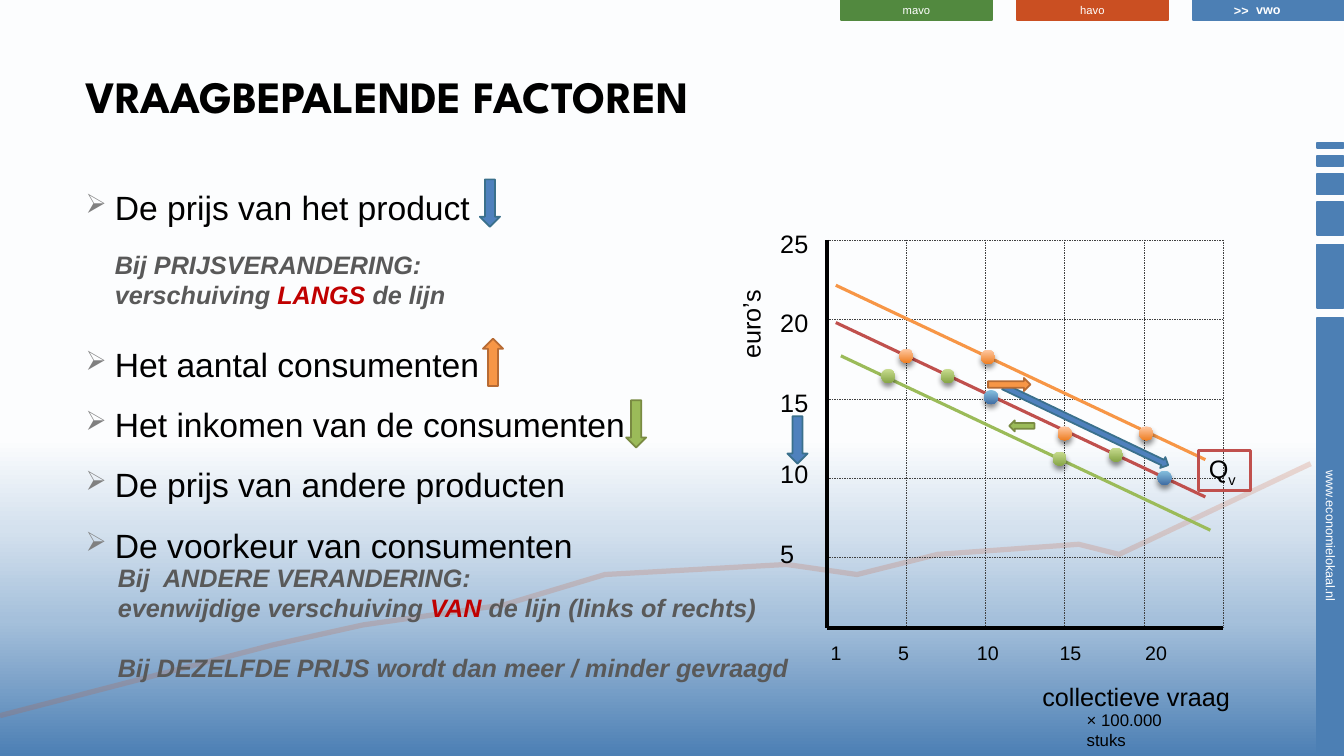
import pptx
import pptx.util
import pptx.dml.color
import pptx.enum.dml
import pptx.enum.shapes
import pptx.enum.text
import pptx.oxml
import pptx.oxml.ns
from lxml import etree

Pt = pptx.util.Pt
KIND = pptx.enum.shapes.MSO_SHAPE
ANCHOR = pptx.enum.text.MSO_ANCHOR
ALIGN = pptx.enum.text.PP_ALIGN
qn = pptx.oxml.ns.qn

HUES = {
    "black": "000000", "white": "FFFFFF", "grey": "595959", "grid": "404040",
    "mark": "808080", "brand": "4C7FB4", "rust": "CA4F22", "leaf": "52893F",
    "alert": "C00000", "red": "C0504D", "blue": "4F81BD", "orange": "F79646",
    "green": "9BBB59", "blue edge": "3A708C", "orange edge": "B76B34",
    "green edge": "798A42",
}
SKY = [(0, "4C7FB4"), (18, "A5C0DB"), (30, "D4E1EE"), (42, "FCFDFE"), (50, "FFFFFF")]
GLOSS = {
    "blue": [(0, "86C0DF"), (100, "416EA4")],
    "orange": [(0, "FFC9A4"), (100, "EE7E22")],
    "green": [(0, "C9DD90"), (100, "86A547")],
}


def rgb(name):
    return pptx.dml.color.RGBColor.from_string(HUES[name])


def sub(parent, tag, **attrs):
    return etree.SubElement(parent, qn(tag), {k: str(v) for k, v in attrs.items()})


def blend(fill, owner, stops, angle):
    """Give fill a linear gradient with any number of stops."""
    fill.gradient()
    fill.gradient_angle = angle
    ramp = next(owner.iter(qn("a:gsLst")))
    for stop in list(ramp):
        ramp.remove(stop)
    for pos, hue in stops:
        sub(sub(ramp, "a:gs", pos=pos * 1000), "a:srgbClr", val=hue)


def write(frame, paras, size=18, color="black", font="Arial", bold=False,
          italic=False, align=ALIGN.LEFT, gaps=(), bullet=None):
    """Fill frame; a paragraph is a string or a list of strings and (text, format) pairs."""
    for i, para in enumerate([paras] if isinstance(paras, str) else paras):
        p = frame.paragraphs[0] if i == 0 else frame.add_paragraph()
        p.alignment = align
        if bullet:
            props = p._p.get_or_add_pPr()
            props.set("marL", str(Pt(21)))
            props.set("indent", str(-Pt(21)))
            sub(sub(props, "a:buClr"), "a:srgbClr", val=HUES["mark"])
            sub(props, "a:buSzPct", val=80000)
            sub(props, "a:buChar", char=bullet)
        if i and gaps:
            p.space_before = Pt(gaps[i - 1])
        for part in [para] if isinstance(para, str) else para:
            text, extra = (part, {}) if isinstance(part, str) else part
            if text == "\n":
                p.add_line_break()
                continue
            run = p.add_run()
            run.text = text
            face = run.font
            face.name, face.size, face.bold, face.italic = font, Pt(size), bold, italic
            face.color.rgb = rgb(extra.get("color", color))
            if "base" in extra:
                run._r.get_or_add_rPr().set("baseline", str(extra["base"] * 1000))


class Board:
    """One slide on a grid of 75 rows; columns are as wide as rows are high."""

    def __init__(self):
        self.deck = pptx.Presentation()
        self.deck.slide_width = pptx.util.Inches(13.33)
        self.deck.slide_height = pptx.util.Inches(7.5)
        self.unit = self.deck.slide_height / 75
        self.slide = self.deck.slides.add_slide(self.deck.slide_layouts[5])
        self.shapes = self.slide.shapes
        blend(self.slide.background.fill, self.slide.element, SKY, 90)

    def at(self, *cells):
        return [round(c * self.unit) for c in cells]

    def title(self, text, *box):
        head = self.shapes.title
        head.left, head.top, head.width, head.height = self.at(*box)
        head.text_frame.vertical_anchor = ANCHOR.MIDDLE
        write(head.text_frame, text, size=32, font="League Spartan", bold=True)

    def text(self, paras, *box, wrap=False, rot=0, **style):
        item = self.shapes.add_textbox(*self.at(*box))
        item.rotation = rot
        item.text_frame.word_wrap = wrap
        write(item.text_frame, paras, **style)

    def shape(self, kind, *box, fill=None, edge=None, width=1.25, rot=0):
        item = self.shapes.add_shape(kind, *self.at(*box))
        item.shadow.inherit = False
        item.rotation = rot
        if fill:
            item.fill.solid()
            item.fill.fore_color.rgb = rgb(fill)
        else:
            item.fill.background()
        if edge:
            item.line.color.rgb = rgb(edge)
            item.line.width = Pt(width)
        else:
            item.line.fill.background()
        return item

    def label(self, text, *box, fill, rot=0, **style):
        item = self.shape(KIND.RECTANGLE, *box, fill=fill, edge=fill, rot=rot)
        frame = item.text_frame
        frame.margin_top, frame.margin_bottom = self.at(0, 0.1)
        frame.vertical_anchor = ANCHOR.MIDDLE
        if text:
            write(frame, text, color="white", align=ALIGN.CENTER, **style)

    def bar(self, mid, size, text=None):
        """Bar of the right edge, turned a quarter, centred on row mid."""
        self.label(text, 131.95 - size / 2, mid - 1.3, size, 2.6,
                   fill="brand", rot=90, size=9)

    def arrow(self, kind, hue, *box, rot=0):
        self.shape(kind, *box, fill=hue, edge=hue + " edge", rot=rot)

    def dot(self, hue, x, y):
        item = self.shape(KIND.OVAL, x, y, 1.4, 1.4)
        blend(item.fill, item.element, GLOSS[hue], 270)
        glow = item.element.spPr.find(qn("a:effectLst"))
        cast = sub(glow, "a:outerShdw", blurRad=Pt(4), dist=Pt(3), dir=5400000, rotWithShape=0)
        sub(sub(cast, "a:srgbClr", val=HUES["black"]), "a:alpha", val=46000)

    def line(self, *ends, hue="black", width=3, dash=False):
        item = self.shapes.add_connector(pptx.enum.shapes.MSO_CONNECTOR.STRAIGHT, *self.at(*ends))
        item.line.color.rgb = rgb(hue)
        item.line.width = Pt(width)
        if dash:
            item.line.dash_style = pptx.enum.dml.MSO_LINE.DASH
        sub(item.element.spPr, "a:effectLst")

    def trend(self, points, hue, width, alpha):
        path = self.shapes.build_freeform(*points[0], scale=self.unit)
        path.add_line_segments(points[1:], close=False)
        item = path.convert_to_shape()
        item.shadow.inherit = False
        item.fill.background()
        item.line.color.rgb = rgb(hue)
        item.line.width = Pt(width)
        tint = item.element.spPr.find(qn("a:ln")).find(".//" + qn("a:srgbClr"))
        sub(tint, "a:alpha", val=alpha * 1000)


def frame(b):
    b.bar(53.2, 43.3, "www.economielokaal.nl")
    tabs = [("mavo", "leaf", 8), ("havo", "rust", 8), ("vwo", "brand", 9)]
    for i, (name, fill, size) in enumerate(tabs):
        b.label(name, 83.4 + 17.45 * i, 0, 15, 2, fill=fill, size=size, bold=name == "vwo")
    for mid, size in [(27.4, 6.3), (21.7, 3.3), (18.3, 2), (16, 1), (14.4, 0.5)]:
        b.bar(mid, size)
    b.trend([(129.7, 46.2), (111.2, 55.1), (107.1, 53.7), (92.8, 54.9), (84.9, 56.6),
             (78.5, 55.7), (59.7, 56.8), (50.1, 60.3), (35.7, 61.5), (27, 63.8),
             (0.3, 71.3)], "rust", 3.75, 19)
    b.text(">>", 121.4, -0.2, 3.5, 2.5, size=9, color="white", bold=True)


def factors(b):
    b.title("VRAAGBEPALENDE FACTOREN", 7.5, 5, 100.2, 8.9)
    b.text(["De prijs van het product", "Het aantal consumenten",
            "Het inkomen van de consumenten", "De prijs van andere producten",
            "De voorkeur van consumenten"], 7.5, 18.1, 58.3, 38, wrap=True,
           size=24, bullet="➢", gaps=(83, 14.2, 14.2, 14.2))
    note = dict(color="grey", bold=True, italic=True)
    b.text([["Bij PRIJSVERANDERING:", "\n", "verschuiving ",
             ("LANGS", {"color": "alert"}), " de lijn"]], 10.4, 24.2, 35.1, 7.1, **note)
    b.text([["Bij  ANDERE VERANDERING:", "\n", "evenwijdige verschuiving ",
             ("VAN", {"color": "alert"}), " de lijn (links of rechts)"],
            "Bij DEZELFDE PRIJS wordt dan meer / minder gevraagd"],
           10.7, 55.3, 69.2, 13.1, gaps=(20.7,), **note)
    b.arrow(KIND.DOWN_ARROW, "blue", 47.6, 17.8, 2, 4.7)
    b.arrow(KIND.UP_ARROW, "orange", 47.9, 33.6, 2, 4.7)
    b.arrow(KIND.DOWN_ARROW, "green", 62.1, 39.7, 2, 4.7)


def graph(b):
    left, top, right, base = 82, 23.8, 121.3, 62.3
    thin = dict(hue="grid", width=0.25, dash=True)
    for i in range(5):
        row, col = top + 7.88 * i, left + 7.86 * (i + 1)
        b.line(left, row, right, row, **thin)
        b.line(col, top, col, base, **thin)
    b.line(left, top, left, base)
    b.line(right, base, left, base)
    b.text("collectieve vraag", 102.4, 67.1, 23.7, 4)
    b.text("× 100.000 stuks", 106.8, 69.9, 11, 3, wrap=True, size=12)
    b.text("euro’s", 69.7, 29.8, 9.5, 4, rot=270)
    for value, y in zip((25, 20, 15, 10, 5), (22.2, 30, 37.9, 45, 52.9)):
        b.text(str(value), 76.4, y, 4.8 if value > 9 else 3.4, 4)
    for value, x in zip((1, 5, 10, 15, 20), (81.4, 88.1, 95.9, 104.1, 112.6)):
        b.text(str(value), x, 63.1, 4.2 if value > 9 else 3.1, 3.4, size=14)
    for hue, x, y in [("red", 82.9, 32), ("orange", 82.9, 28.3), ("green", 83.4, 35.3)]:
        b.line(x, y, x + 36.65, y + 17.3, hue=hue, width=2.25)
    box = b.shape(KIND.RECTANGLE, 118.9, 44.7, 5.1, 4, edge="red", width=2.25)
    box.text_frame.word_wrap = False
    write(box.text_frame, [["Q", ("v", {"base": -25})]])
    dots = {
        "blue": [(97.6, 38.7), (114.8, 46.7)],
        "orange": [(89.2, 34.6), (104.9, 42.3), (97.3, 34.7), (113, 42.3)],
        "green": [(93.3, 36.6), (110, 44.4), (87.4, 36.6), (104.4, 44.8)],
    }
    for hue, spots in dots.items():
        for spot in spots:
            b.dot(hue, *spot)
    b.arrow(KIND.DOWN_ARROW, "blue", 78.1, 41.3, 2, 4.7)
    b.arrow(KIND.DOWN_ARROW, "blue", 107.1, 33.2, 1.2, 18.1, rot=295.5)
    b.arrow(KIND.RIGHT_ARROW, "orange", 98, 37.5, 4.2, 1.3)
    b.arrow(KIND.LEFT_ARROW, "green", 100.1, 41.7, 2.5, 1.1)


def main():
    board = Board()
    frame(board)
    factors(board)
    graph(board)
    board.deck.save("out.pptx")


if __name__ == "__main__":
    main()
